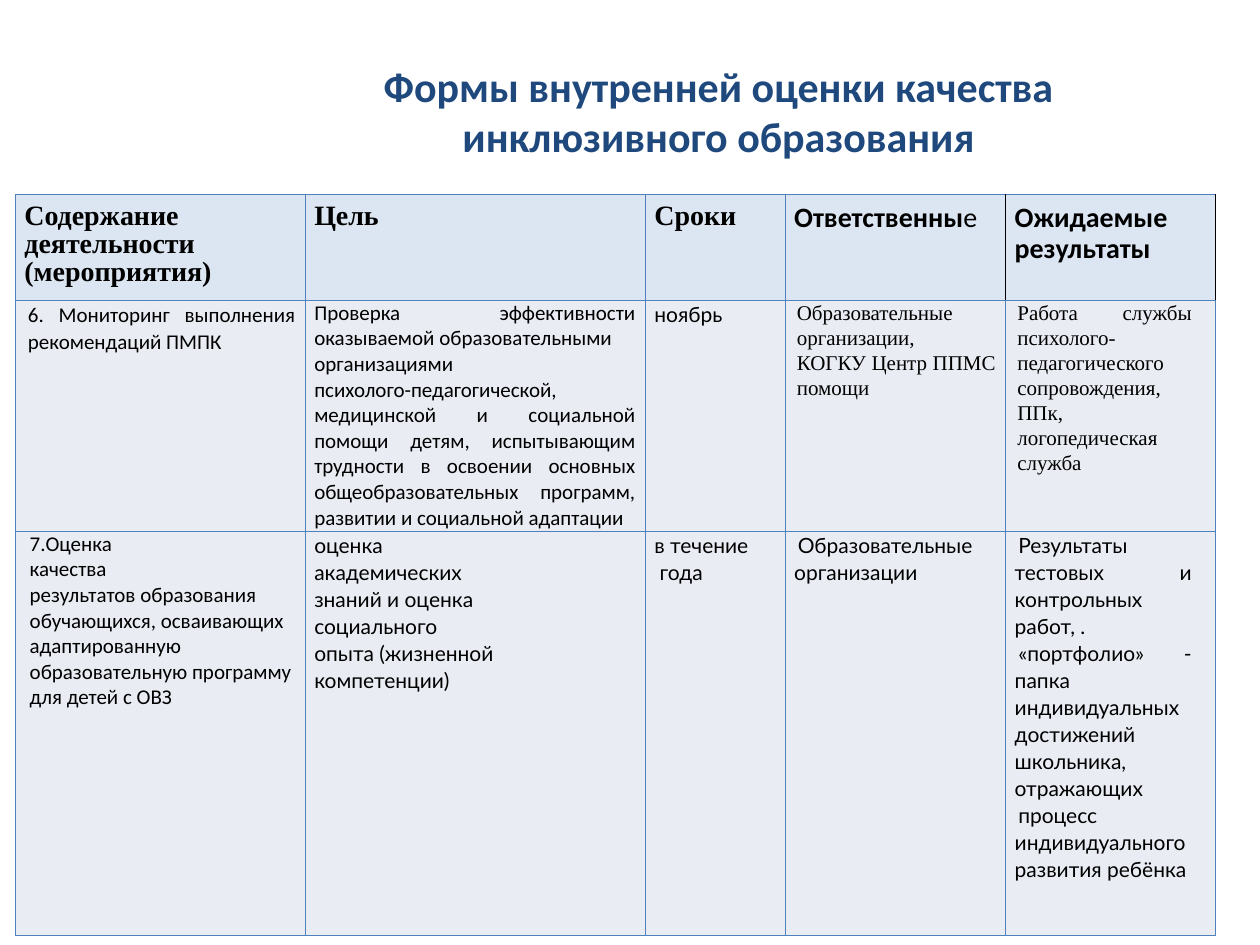
from lxml.etree import SubElement
from pptx import Presentation
from pptx.dml.color import RGBColor
from pptx.enum.text import PP_ALIGN
from pptx.oxml import parse_xml
from pptx.oxml.ns import nsdecls
from pptx.util import Pt

LEFT, MID, JUST = PP_ALIGN.LEFT, PP_ALIGN.CENTER, PP_ALIGN.JUSTIFY
CAL, LATO, TIMES = "Calibri", "Lato", "Times New Roman"
BLUE, BLACK, NAVY = "4F81BD", "000000", "1F497D"
HEAD, BODY = "DCE6F2", "E9ECF3"

TITLE = "Формы внутренней оценки качества инклюзивного образования"
COLS = [165.6, 194.4, 79.9, 126, 120.1]
ROWS = [59.2, 132, 231]

# Each cell: paragraphs, then format. A paragraph may carry its own format.
HEADS = [
    (["Содержание деятельности", "(мероприятия)"], dict(font=TIMES)),
    (["Цель"], dict(font=TIMES)),
    (["Сроки"], dict(font=TIMES)),
    ([("Ответственны", dict(tail="е"))], dict(font=CAL)),
    (["Ожидаемые", "результаты"], dict(font=CAL)),
]
TASKS = [
    [
        (["6. Мониторинг выполнения рекомендаций ПМПК"],
         dict(font=CAL, left=2, space=1.07)),
        (["Проверка эффективности оказываемой образовательными",
          "организациями",
          "психолого-педагогической,",
          "медицинской и социальной помощи детям, испытывающим трудности "
          "в освоении основных общеобразовательных программ, развитии "
          "и социальной адаптации"], dict(font=CAL)),
        (["ноябрь"], dict(font=LATO, space=1.07)),
        (["Образовательные организации,", "КОГКУ Центр ППМС помощи"],
         dict(font=TIMES, left=1.5, space=1.07)),
        (["Работа службы психолого-педагогического сопровождения, ППк, "
          "логопедическая служба"],
         dict(font=TIMES, left=1.5, space=1.07)),
    ],
    [
        (["7.Оценка", "качества",
          "результатов образования обучающихся, осваивающих адаптированную "
          "образовательную программу для детей с ОВЗ"],
         dict(font=CAL, left=3, align=LEFT)),
        (["оценка", "академических", "знаний и оценка", "социального",
          "опыта (жизненной", "компетенции)"],
         dict(font=LATO, space=1.07)),
        (["в течение", ("года", dict(first=3))],
         dict(font=LATO, space=1.07)),
        (["Образовательные организации"],
         dict(font=LATO, first=2, space=1.07)),
        (["Результаты тестовых и контрольных работ, .",
          "«портфолио» - папка индивидуальных достижений школьника, "
          "отражающих",
          "процесс индивидуального развития ребёнка"],
         dict(font=LATO, first=2, space=1.07)),
    ],
]


def color(code):
    return RGBColor.from_string(code)


def add_run(para, text, size, font, ink, bold):
    run = para.add_run()
    run.text = text
    run.font.size, run.font.name, run.font.bold = Pt(size), font, bold
    run.font.color.rgb = color(ink)


def add_para(para, text, size=12, font=CAL, ink=BLACK, bold=False,
             align=JUST, left=0, first=0, space=1.0, tail=""):
    """Fill one paragraph; tail is a closing run that is never bold."""
    para.alignment, para.line_spacing = align, space
    props = para._p.get_or_add_pPr()
    props.set("marL", str(Pt(left)))
    props.set("indent", str(Pt(first)))
    add_run(para, text, size, font, ink, bold)
    if tail:
        add_run(para, tail, size, font, ink, False)


def write(frame, paras, **form):
    frame.word_wrap = True
    for i, item in enumerate(paras):
        text, own = item if isinstance(item, tuple) else (item, {})
        para = frame.add_paragraph() if i else frame.paragraphs[0]
        add_para(para, text, **{**form, **own})


def edge(cell, inks):
    """Set the left, right, top and bottom borders."""
    props = cell._tc.get_or_add_tcPr()
    for i, (side, ink) in enumerate(zip("LRTB", inks)):
        line = parse_xml(f'<a:ln{side} {nsdecls("a")} w="{Pt(0.23)}">'
                         f'<a:solidFill><a:srgbClr val="{ink}"/>'
                         f'</a:solidFill></a:ln{side}>')
        props.insert(i, line)


def fill_cell(cell, paras, form, back, pads, inks):
    cell.fill.solid()
    cell.fill.fore_color.rgb = color(back)
    (cell.margin_left, cell.margin_top,
     cell.margin_right, cell.margin_bottom) = map(Pt, pads)
    write(cell.text_frame, paras, **form)
    edge(cell, inks)


def main():
    deck = Presentation()
    deck.slide_width, deck.slide_height = Pt(720), Pt(540)
    slide = deck.slides.add_slide(deck.slide_layouts[6])

    box = slide.shapes.add_textbox(Pt(167), Pt(31), Pt(487.4), Pt(57.6))
    write(box.text_frame, [TITLE], size=24, ink=NAVY, bold=True, align=MID)

    table = slide.shapes.add_table(
        len(ROWS), len(COLS), Pt(8.6), Pt(111.2),
        Pt(sum(COLS)), Pt(sum(ROWS))).table
    table.first_row = table.horz_banding = False
    for col, width in zip(table.columns, COLS):
        col.width = Pt(width)
    for row, height in zip(table.rows, ROWS):
        row.height = Pt(height)

    last = len(COLS) - 1
    for c, (paras, form) in enumerate(HEADS):
        form = dict(form, size=16, bold=True, align=LEFT, space=0.9)
        left = BLACK if c == last else BLUE
        right = BLACK if c >= last - 1 else BLUE
        fill_cell(table.cell(0, c), paras, form, HEAD,
                  (5.4, 5, 5.4, 3.6), (left, right, BLUE, BLUE))
    for r, task in enumerate(TASKS, 1):
        for c, (paras, form) in enumerate(task):
            right = 13.5 if c == last else 5.4
            fill_cell(table.cell(r, c), paras, form, BODY,
                      (5.4, 0, right, 0), [BLUE] * 4)

    deck.save("out.pptx")


if __name__ == "__main__":
    main()
